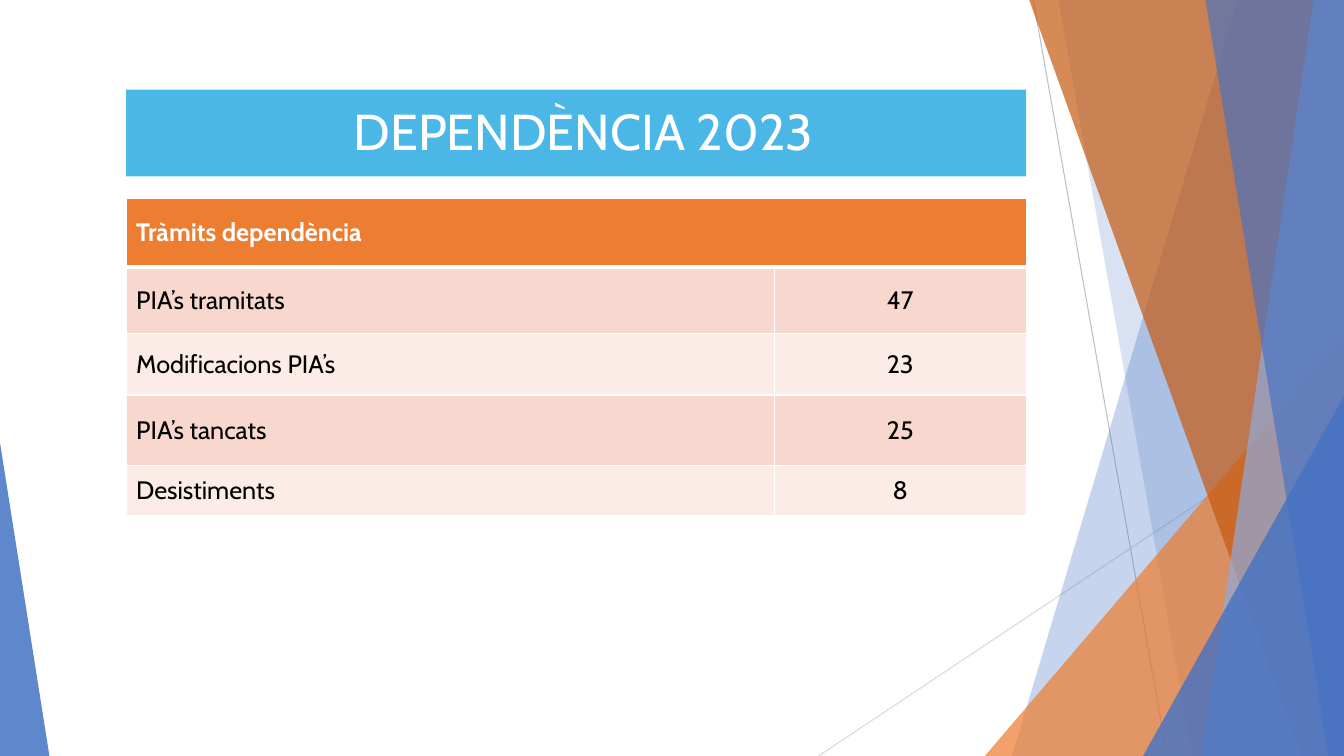
from dataclasses import dataclass

from lxml.etree import SubElement
from pptx import Presentation
from pptx.dml.color import RGBColor
from pptx.enum.shapes import MSO_CONNECTOR, MSO_SHAPE
from pptx.enum.text import MSO_ANCHOR, MSO_AUTO_SIZE, PP_ALIGN
from pptx.oxml.ns import qn
from pptx.util import Emu, Inches, Pt

WIDTH, HEIGHT = Inches(13.333), Inches(7.5)
FONT = "Cabin"
WHITE = RGBColor(0xFF, 0xFF, 0xFF)
BLACK = RGBColor(0x00, 0x00, 0x00)
SKY = RGBColor(0x4B, 0xB7, 0xE7)
BLUE = RGBColor(0x44, 0x72, 0xC4)
PALE_BLUE = RGBColor(0x8F, 0xAA, 0xDC)
ORANGE = RGBColor(0xED, 0x7D, 0x31)
RUST = RGBColor(0xC5, 0x5A, 0x11)
PEACH = RGBColor(0xF8, 0xD7, 0xCE)
BLUSH = RGBColor(0xFC, 0xEC, 0xE8)
GREY = RGBColor(0xBF, 0xBF, 0xBF)
LIGHT_GREY = RGBColor(0xD9, 0xD9, 0xD9)


@dataclass(frozen=True)
class Ray:
    start: tuple[float, float]
    end: tuple[float, float]
    color: RGBColor


@dataclass(frozen=True)
class Band:
    top_x: float
    bottom_x: float
    color: RGBColor
    opacity: int


@dataclass(frozen=True)
class Corner:
    left: float
    right: float
    top: float
    apex: int
    color: RGBColor
    opacity: int


@dataclass(frozen=True)
class Row:
    label: str
    value: str
    height: float


RAYS = [
    Ray((76.88, 0), (86.85, 100), GREY),
    Ray((100, 53.73), (60.9, 100), LIGHT_GREY),
]
FACETS = [
    Band(92.1, 75.3, BLUE, 30),
    Band(78.75, 88.73, BLUE, 20),
    Corner(73.28, 100, 44.4, 1, ORANGE, 72),
    Band(76.58, 96.83, RUST, 70),
    Band(97.73, 89.4, PALE_BLUE, 70),
    Band(89.7, 98.85, BLUE, 65),
    Corner(85.05, 100, 52.4, 1, BLUE, 80),
    Corner(0, 3.68, 58.53, 0, BLUE, 85),
]
ROWS = [
    Row("Tràmits dependència", "", 9.07),
    Row("PIA’s tramitats", "47", 8.8),
    Row("Modificacions PIA’s", "23", 8.13),
    Row("PIA’s tancats", "25", 9.33),
    Row("Desistiments", "8", 6.67),
]
LEFT = 9.38
COLUMNS = (48.23, 18.75)


def x(share: float) -> Emu:
    return Emu(round(WIDTH * share / 100))


def y(share: float) -> Emu:
    return Emu(round(HEIGHT * share / 100))


def apply(target, formats: dict) -> None:
    for name, value in formats.items():
        setattr(target, name, value)


def fill_solid(item, color: RGBColor) -> None:
    item.fill.solid()
    item.fill.fore_color.rgb = color


def draw_ray(s, ray: Ray) -> None:
    line = s.shapes.add_connector(
        MSO_CONNECTOR.STRAIGHT, x(ray.start[0]), y(ray.start[1]), x(ray.end[0]), y(ray.end[1])
    )
    line.line.color.rgb = ray.color
    line.line.width = Pt(0.75)
    SubElement(line._element.spPr, qn("a:effectLst"))


def draw_facet(s, facet: Band | Corner) -> None:
    if isinstance(facet, Band):
        builder = s.shapes.build_freeform(x(facet.top_x), 0)
        builder.add_line_segments([(x(100), 0), (x(100), y(100)), (x(facet.bottom_x), y(100))])
        sp = builder.convert_to_shape()
    else:
        sp = s.shapes.add_shape(
            MSO_SHAPE.ISOSCELES_TRIANGLE,
            x(facet.left), y(facet.top), x(facet.right - facet.left), y(100 - facet.top),
        )
        sp.adjustments[0] = facet.apex
    fill_solid(sp, facet.color)
    color = sp._element.spPr.find(qn("a:solidFill"))[0]
    SubElement(color, qn("a:alpha"), val=str(facet.opacity * 1000))
    sp.line.fill.background()
    sp.shadow.inherit = False


def write(tf, text: str, font: dict, align: PP_ALIGN) -> None:
    p = tf.paragraphs[0]
    p.alignment = align
    r = p.add_run()
    r.text = text
    apply(r.font, {"name": FONT, **font})
    r.font.color.rgb = font_color(font)


def font_color(font: dict) -> RGBColor:
    return BLACK if font.get("bold") is False else WHITE


def draw_title(s) -> None:
    sp = s.shapes.title
    apply(sp, {"left": x(LEFT), "top": y(11.87), "width": x(sum(COLUMNS)), "height": y(11.47)})
    fill_solid(sp, SKY)
    tf = sp.text_frame
    apply(tf, {
        "auto_size": MSO_AUTO_SIZE.NONE,
        "word_wrap": True,
        "vertical_anchor": MSO_ANCHOR.MIDDLE,
        "margin_left": Inches(0.24),
        "margin_top": Inches(0.08),
    })
    write(tf, "DEPENDÈNCIA 2023", {"size": Pt(36)}, PP_ALIGN.CENTER)
    tf.paragraphs[0].line_spacing = 0.9


def set_borders(cell, bottom: float) -> None:
    tc_pr = cell._tc.get_or_add_tcPr()
    for side, width in {"L": 1, "R": 1, "T": 1, "B": bottom}.items():
        ln = SubElement(tc_pr, qn(f"a:ln{side}"), w=str(Pt(width)))
        SubElement(SubElement(ln, qn("a:solidFill")), qn("a:srgbClr"), val=str(WHITE))


def draw_table(s) -> None:
    height = sum(row.height for row in ROWS)
    table = s.shapes.add_table(
        len(ROWS), len(COLUMNS), x(LEFT), y(26.27), x(sum(COLUMNS)), y(height)
    ).table
    for column, share in zip(table.columns, COLUMNS):
        column.width = x(share)
    table.cell(0, 0).merge(table.cell(0, 1))
    for i, row in enumerate(ROWS):
        table.rows[i].height = y(row.height)
        header = i == 0
        color = ORANGE if header else (PEACH if i % 2 else BLUSH)
        for j, text in enumerate((row.label, row.value)):
            cell = table.cell(i, j)
            set_borders(cell, 3 if header else 1)
            fill_solid(cell, color)
            cell.vertical_anchor = MSO_ANCHOR.MIDDLE
            if text:
                align = PP_ALIGN.CENTER if j else PP_ALIGN.LEFT
                write(cell.text_frame, text, {"size": Pt(18), "bold": header}, align)


def main() -> None:
    prs = Presentation()
    apply(prs, {"slide_width": WIDTH, "slide_height": HEIGHT})
    s = prs.slides.add_slide(prs.slide_layouts[5])
    for ray in RAYS:
        draw_ray(s, ray)
    for facet in FACETS:
        draw_facet(s, facet)
    draw_title(s)
    draw_table(s)
    prs.save("out.pptx")


if __name__ == "__main__":
    main()
